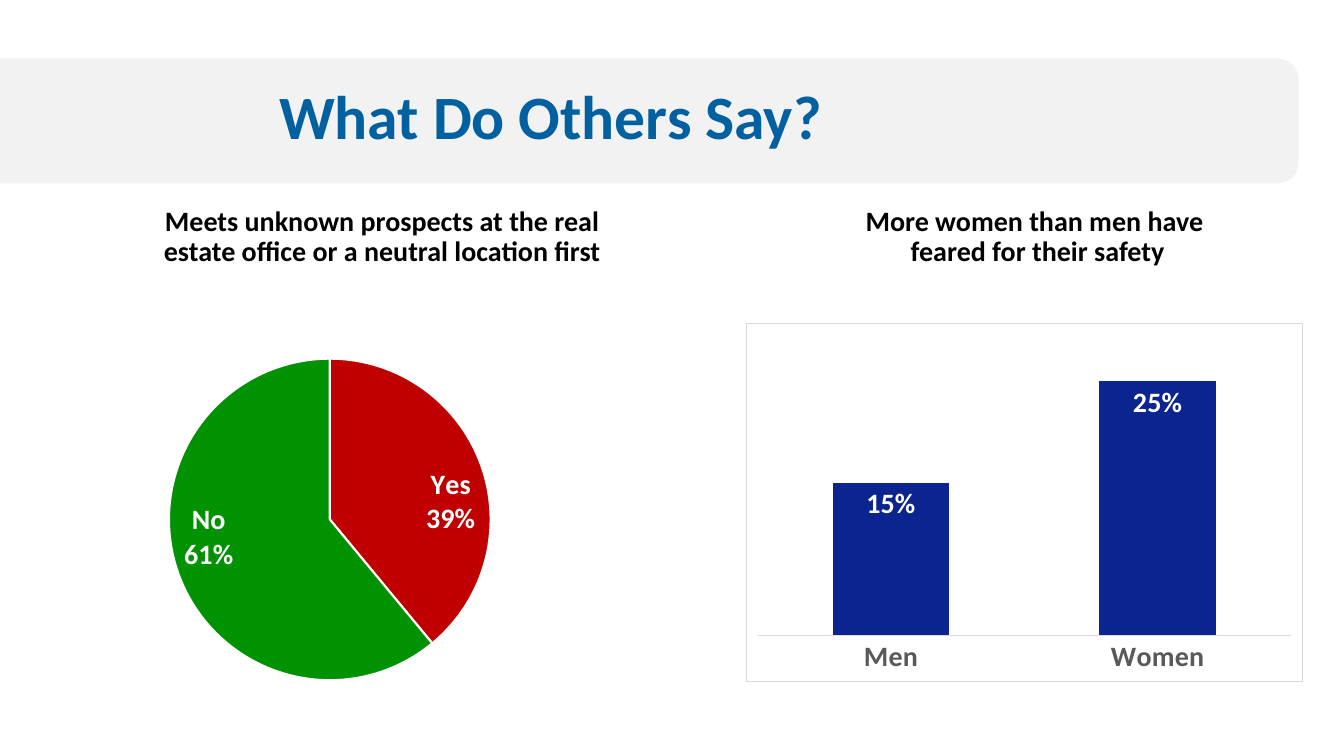
from lxml.etree import SubElement
from pptx import Presentation
from pptx.chart.data import CategoryChartData
from pptx.dml.color import RGBColor
from pptx.enum.chart import XL_CHART_TYPE as CT, XL_LABEL_POSITION as LP, XL_TICK_MARK as TM
from pptx.enum.shapes import MSO_SHAPE
from pptx.enum.text import MSO_ANCHOR, PP_ALIGN
from pptx.oxml import parse_xml
from pptx.oxml.ns import nsdecls, qn
from pptx.util import Inches, Pt

FONT = "Calibri"
BLACK = RGBColor(0x00, 0x00, 0x00)
WHITE = RGBColor(0xFF, 0xFF, 0xFF)
BAND = RGBColor(0xF2, 0xF2, 0xF2)
TITLE_BLUE = RGBColor(0x00, 0x60, 0xA0)
BAR_BLUE = RGBColor(0x0B, 0x24, 0x8F)
YES_RED = RGBColor(0xC0, 0x00, 0x00)
NO_GREEN = RGBColor(0x00, 0x92, 0x00)
AXIS_TEXT = RGBColor(0x59, 0x59, 0x59)
RULE = RGBColor(0xD9, 0xD9, 0xD9)


def style_font(font, size, color):
    """Apply the bold slide typeface."""
    font.name, font.size, font.bold = FONT, Pt(size), True
    font.color.rgb = color


def add_text(s, box, text, size, color, align, anchor):
    """Place one wrapped paragraph in the box."""
    tf = s.shapes.add_textbox(*map(Inches, box)).text_frame
    tf.word_wrap, tf.vertical_anchor = True, anchor
    tf.text = text
    p = tf.paragraphs[0]
    p.alignment, p.line_spacing = align, 0.9
    for r in p.runs:
        style_font(r.font, size, color)


def add_header(s, box):
    """Draw the title band and the title inside it."""
    x, y, w, h = box
    sp = s.shapes.add_shape(MSO_SHAPE.ROUNDED_RECTANGLE, *map(Inches, box))
    sp.shadow.inherit = False
    sp.fill.solid()
    sp.fill.fore_color.rgb = BAND
    sp.line.fill.background()
    add_text(s, (x + 2.99, y, w - 2.99, h - 0.02), "What Do Others Say?",
             44, TITLE_BLUE, PP_ALIGN.LEFT, MSO_ANCHOR.MIDDLE)


def add_heading(s, box, text):
    """Place a centred heading above a chart."""
    add_text(s, box, text, 20, BLACK, PP_ALIGN.CENTER, MSO_ANCHOR.TOP)


def add_share_chart(s, box, kind, categories, values, layout):
    """Add a one-series percentage chart with a fixed inner plot area."""
    data = CategoryChartData(number_format="0%")
    data.categories = categories
    data.add_series("Series 1", values)
    chart = s.shapes.add_chart(kind, *map(Inches, box), data).chart
    chart.has_title = chart.has_legend = False
    chart.font.name, chart.font.size = FONT, Pt(10)
    plot = chart.plots[0]
    plot.vary_by_categories = kind == CT.PIE
    plot.has_data_labels = True
    labels = plot.data_labels
    style_font(labels.font, 20, WHITE)
    labels.number_format, labels.number_format_is_linked = "0%", False
    labels.show_value, labels.position = True, LP.INSIDE_END

    area = chart._chartSpace.chart.plotArea
    for old in area.findall(qn("c:layout")):
        area.remove(old)
    node = parse_xml(f"<c:layout {nsdecls('c')}><c:manualLayout/></c:layout>")
    area.insert(0, node)
    settings = [("layoutTarget", "inner"), ("xMode", "edge"), ("yMode", "edge")]
    for tag, value in settings + list(zip("xywh", layout)):
        SubElement(node[0], qn(f"c:{tag}")).set("val", str(value))
    return chart


def add_prospects_pie(s, box):
    """Draw the pie of agents who meet prospects at a neutral place."""
    chart = add_share_chart(s, box, CT.PIE, ("Yes", "No"), (0.39, 0.61),
                            (0.166, 0.092, 0.578, 0.867))
    plot = chart.plots[0]
    plot.data_labels.show_category_name = True
    separator = parse_xml(f"<c:separator {nsdecls('c')}>\n</c:separator>")
    plot.data_labels._element.find(qn("c:showBubbleSize")).addnext(separator)
    for i, color in enumerate((YES_RED, NO_GREEN)):
        form = plot.series[0].points[i].format
        form.fill.solid()
        form.fill.fore_color.rgb = color
        form.line.color.rgb, form.line.width = WHITE, Pt(1.5)


def add_safety_columns(s, box):
    """Draw the framed columns of men and women who feared for safety."""
    chart = add_share_chart(s, box, CT.COLUMN_CLUSTERED, ("Men", "Women"),
                            (0.15, 0.25), (0.02, 0.02, 0.96, 0.85))
    plot = chart.plots[0]
    plot.gap_width, plot.overlap = 129, -27
    fill = plot.series[0].format.fill
    fill.solid()
    fill.fore_color.rgb = BAR_BLUE
    value_axis, axis = chart.value_axis, chart.category_axis
    value_axis.minimum_scale, value_axis.maximum_scale = 0, 0.3
    value_axis.has_major_gridlines = value_axis.visible = False
    axis.major_tick_mark = axis.minor_tick_mark = TM.NONE
    style_font(axis.tick_labels.font, 20, AXIS_TEXT)
    axis.format.line.color.rgb, axis.format.line.width = RULE, Pt(0.75)
    frame = parse_xml(
        f'<c:spPr {nsdecls("c", "a")}><a:noFill/><a:ln w="{Pt(0.75)}"><a:solidFill>'
        f'<a:srgbClr val="{RULE}"/></a:solidFill></a:ln></c:spPr>')
    chart._chartSpace.chart.addnext(frame)


def main():
    """Build and save the slide."""
    prs = Presentation()
    prs.slide_width, prs.slide_height = Inches(13.33), Inches(7.5)
    s = prs.slides.add_slide(prs.slide_layouts[6])
    add_header(s, (-0.32, 0.58, 13.2, 1.24))
    add_heading(s, (1.3, 2.01, 4.98, 0.8),
                "Meets unknown prospects at the real estate office or a neutral location first")
    add_heading(s, (7.77, 2.01, 4.98, 0.8),
                "More women than men have\v feared for their safety")
    add_prospects_pie(s, (0.76, 3.22, 5.52, 3.68))
    add_safety_columns(s, (7.4, 3.2, 5.52, 3.57))
    prs.save("out.pptx")


if __name__ == "__main__":
    main()
